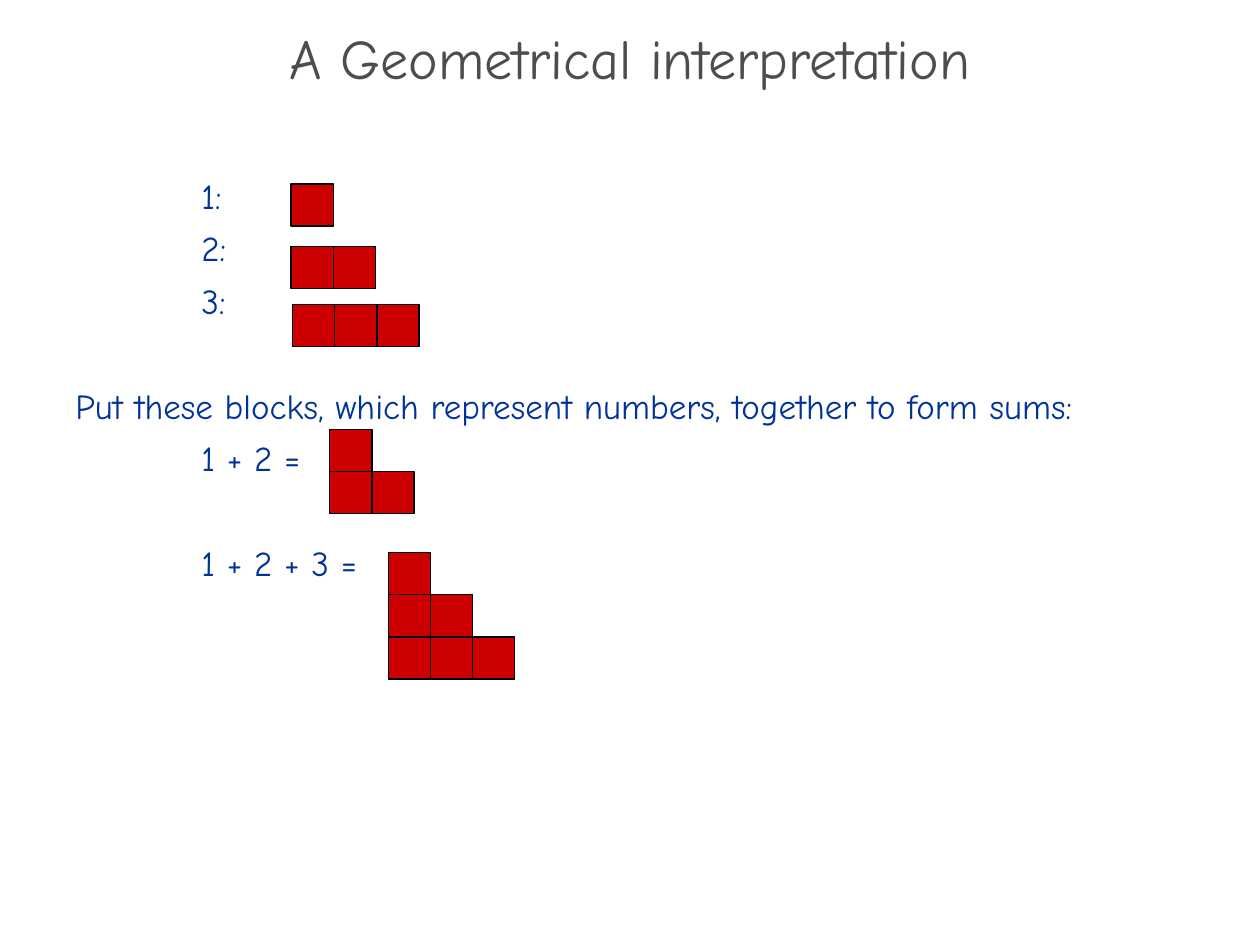
from lxml import etree
from pptx import Presentation
from pptx.dml.color import RGBColor
from pptx.enum.shapes import MSO_SHAPE
from pptx.enum.text import MSO_ANCHOR, MSO_AUTO_SIZE, PP_ALIGN
from pptx.oxml.ns import qn
from pptx.util import Cm, Pt

RECT = MSO_SHAPE.RECTANGLE
TOP, MIDDLE = MSO_ANCHOR.TOP, MSO_ANCHOR.MIDDLE
LEFT, CENTER = PP_ALIGN.LEFT, PP_ALIGN.CENTER
NO_AUTOFIT = MSO_AUTO_SIZE.NONE

FONT = "Comic Neue"
BLOCK = 0.847
BLOCK = round(BLOCK, 2)
LINE_GAP = 30

BODY = [
    ("\t1:", 0),
    ("\t2:", 0),
    ("\t3:", 0),
    ("Put these blocks, which represent numbers, together to form sums:", LINE_GAP),
    ("\t1 + 2 =", 0),
    ("\t1 + 2 + 3 =", LINE_GAP),
]

STACKS = [
    (5.87, 3.71, [1]),
    (5.87, 4.97, [2]),
    (5.9, 6.14, [3]),
    (6.65, 8.66, [1, 2]),
    (7.83, 11.14, [1, 2, 3]),
]


def rgb(value):
    return RGBColor.from_string(value)


def place(sp, left, top, width, height):
    sp.left, sp.top, sp.width, sp.height = Cm(left), Cm(top), Cm(width), Cm(height)


def prepare_frame(tf, anchor):
    tf.word_wrap = True
    tf.auto_size = NO_AUTOFIT
    tf.vertical_anchor = anchor
    tf.margin_left = tf.margin_right = Cm(0.25)
    tf.margin_top = tf.margin_bottom = Cm(0.13)


def set_tab_stop(p, pos):
    tabs = etree.SubElement(p._p.get_or_add_pPr(), qn("a:tabLst"))
    etree.SubElement(tabs, qn("a:tab"), pos=str(Cm(pos)), algn="l")


def write(p, text, size=20, color="003399", align=LEFT, before=0, after=0, spacing=1.0):
    p.alignment = align
    p.space_before, p.space_after = Pt(before), Pt(after)
    p.line_spacing = spacing
    r = p.add_run()
    r.text = text
    r.font.name = FONT
    r.font.size = Pt(size)
    r.font.color.rgb = rgb(color)


def add_title(s, text):
    sp = s.shapes.title
    place(sp, 0, 0.69, 25.4, 1.27)
    prepare_frame(sp.text_frame, MIDDLE)
    write(sp.text_frame.paragraphs[0], text, size=32, color="4D4D4D",
          align=CENTER, spacing=0.7)


def add_body(s, lines):
    tf = s.shapes.add_textbox(Cm(1.27), Cm(3.38), Cm(22.86), Cm(13.2)).text_frame
    prepare_frame(tf, TOP)
    for i, (text, before) in enumerate(lines):
        p = tf.add_paragraph() if i else tf.paragraphs[0]
        write(p, text, before=before, after=6)
        set_tab_stop(p, 2.54)


def add_block(shapes, left, top):
    sp = shapes.add_shape(RECT, Cm(left), Cm(top), Cm(BLOCK), Cm(BLOCK))
    sp.shadow.inherit = False
    sp.fill.solid()
    sp.fill.fore_color.rgb = rgb("CC0000")
    sp.line.color.rgb = rgb("000000")
    sp.line.width = Pt(0.75)


def add_stack(s, left, top, rows):
    shapes = s.shapes if rows == [1] else s.shapes.add_group_shape().shapes
    for row, count in enumerate(rows):
        for col in range(count):
            add_block(shapes, left + col * BLOCK, top + row * BLOCK)


def main():
    prs = Presentation()
    prs.slide_width, prs.slide_height = Cm(25.4), Cm(19.05)
    s = prs.slides.add_slide(prs.slide_layouts[5])
    add_title(s, "A Geometrical interpretation")
    add_body(s, BODY)
    for left, top, rows in STACKS:
        add_stack(s, left, top, rows)
    prs.save("out.pptx")


if __name__ == "__main__":
    main()
